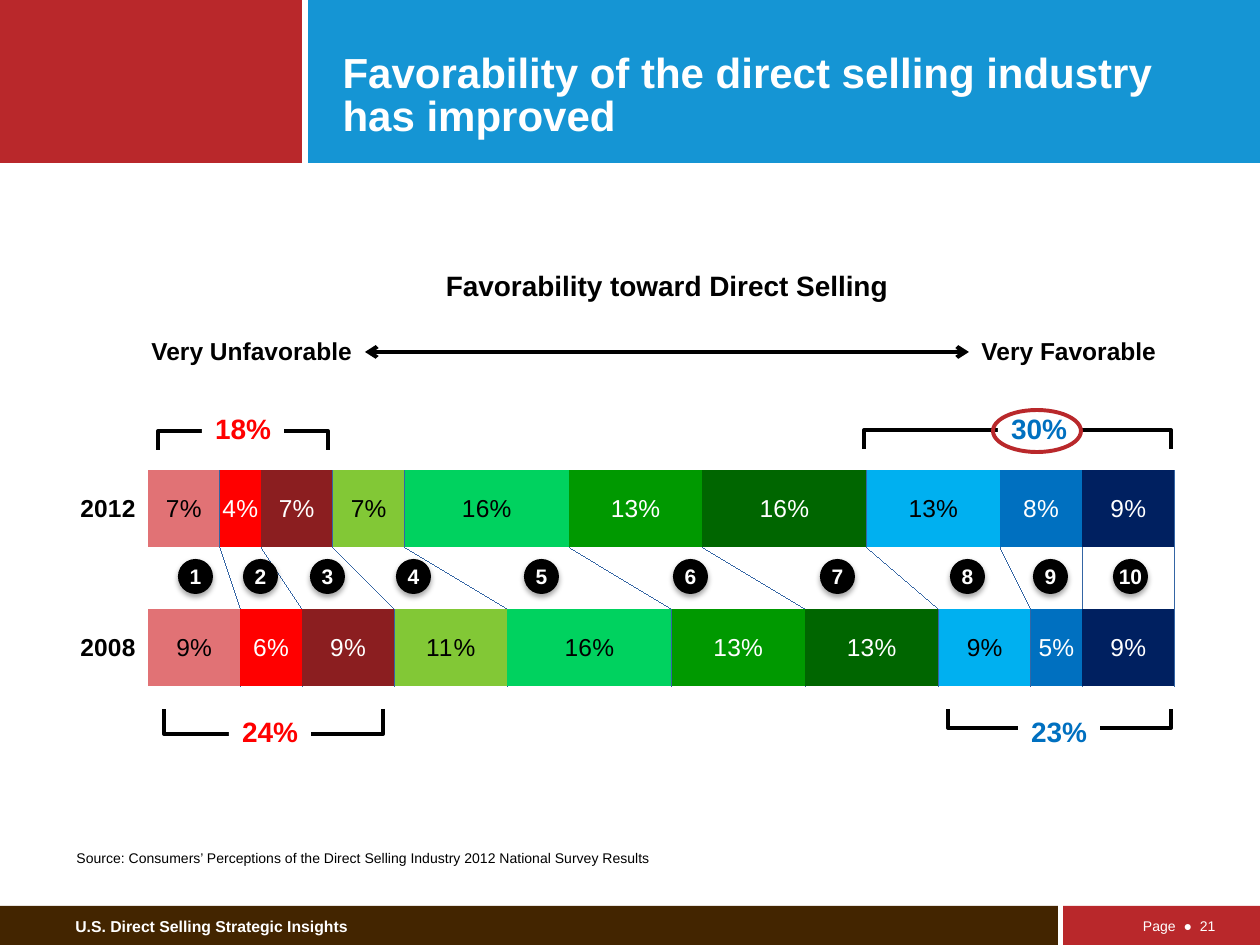
from dataclasses import dataclass

from pptx import Presentation
from pptx.chart.data import CategoryChartData
from pptx.dml.color import RGBColor
from pptx.enum.chart import XL_CHART_TYPE as ChartType, XL_TICK_MARK as Tick
from pptx.enum.shapes import MSO_CONNECTOR as Connector, MSO_SHAPE as Shape
from pptx.enum.text import MSO_ANCHOR as Anchor, MSO_AUTO_SIZE as AutoSize, PP_ALIGN as Align
from pptx.oxml import parse_xml
from pptx.oxml.ns import nsdecls, qn
from pptx.util import Pt

EMU_PER_PX = 914400 / 126


@dataclass(frozen=True)
class Theme:
    font: str = "Arial"
    blue: str = "1595D4"
    red: str = "B9282B"
    brown: str = "432500"
    white: str = "FFFFFF"
    black: str = "000000"
    unfavorable: str = "FF0000"
    favorable: str = "0070C0"
    series_line: str = "4A7EBB"
    title: int = 24
    heading: int = 16
    label: int = 14
    dot: int = 12
    footer: int = 9
    small: int = 8
    stroke: float = 2.25


THEME = Theme()

SCORES = [
    (9, 7, "E17275", THEME.black),
    (6, 4, "FF0000", THEME.white),
    (9, 7, "8B1E20", THEME.white),
    (11, 7, "82C836", THEME.black),
    (16, 16, "00D25F", THEME.black),
    (13, 13, "009900", THEME.white),
    (13, 16, "006600", THEME.white),
    (9, 13, "00B0F0", THEME.black),
    (5, 8, "0070C0", THEME.white),
    (9, 9, "002060", THEME.white),
]
DOT_LEFTS = [178, 243, 310, 396, 524, 673, 820, 950, 1033, 1113]


def px(length):
    return round(length * EMU_PER_PX)


def place(*lengths):
    return [px(length) for length in lengths]


def apply(target, values):
    for name, value in values.items():
        setattr(target, name, value)


def style_font(font, size, color, bold=False):
    apply(font, {"name": THEME.font, "size": Pt(size), "bold": bold})
    font.color.rgb = RGBColor.from_string(color)


def write(shape, text, size, color, bold=False, align=Align.LEFT, inset=None, **frame_values):
    frame = shape.text_frame
    apply(frame, {"word_wrap": True, "auto_size": AutoSize.NONE, **frame_values})
    if inset is not None:
        sides = ("left", "top", "right", "bottom")
        apply(frame, {f"margin_{side}": px(inset) for side in sides})
    para = frame.paragraphs[0]
    para.alignment = align
    span = para.add_run()
    span.text = text
    style_font(span.font, size, color, bold)
    return para


def add_text(page, box, *args, **kwargs):
    write(page.shapes.add_textbox(*place(*box)), *args, **kwargs)


def add_figure(page, kind, box, fill=None, line=None):
    shape = page.shapes.add_shape(kind, *place(*box))
    shape.shadow.inherit = False
    if fill:
        shape.fill.solid()
        shape.fill.fore_color.rgb = RGBColor.from_string(fill)
    else:
        shape.fill.background()
    if line:
        shape.line.color.rgb = RGBColor.from_string(line)
        shape.line.width = Pt(THEME.stroke)
    else:
        shape.line.fill.background()
    return shape


def add_title(page, text):
    title = page.shapes.title
    position = zip(("left", "top", "width", "height"), place(330, 24, 898, 122))
    apply(title, dict(position))
    para = write(title, text, THEME.title, THEME.white, True, vertical_anchor=Anchor.BOTTOM)
    para.line_spacing = 0.85


def add_bracket(page, left, top, width, depth, rotation):
    box = (left + (width - depth) / 2, top + (depth - width) / 2, depth, width)
    bracket = add_figure(page, Shape.RIGHT_BRACKET, box, line=THEME.black)
    bracket.adjustments[0] = 0
    bracket.rotation = rotation


def add_total(page, left, top, text, color):
    shape = add_figure(page, Shape.RECTANGLE, (left, top, 82, 47), THEME.white)
    write(shape, text, THEME.heading, color, True, Align.CENTER,
          vertical_anchor=Anchor.MIDDLE, word_wrap=False)


def add_dot(page, left, number):
    dot = add_figure(page, Shape.OVAL, (left, 559, 35, 35), THEME.black)
    dot.element.spPr.find(qn("a:effectLst")).append(parse_xml(
        f'<a:outerShdw {nsdecls("a")} blurRad="39370" dist="22860" dir="5400000" rotWithShape="0">'
        f'<a:srgbClr val="{THEME.black}"><a:alpha val="35000"/></a:srgbClr></a:outerShdw>'))
    write(dot, str(number), THEME.dot, THEME.white, True, Align.CENTER, inset=0,
          vertical_anchor=Anchor.MIDDLE, word_wrap=False)


def add_double_arrow(page, left, right, y):
    arrow = page.shapes.add_connector(Connector.STRAIGHT, *place(left, y, right, y))
    arrow.line.color.rgb = RGBColor.from_string(THEME.black)
    arrow.line.width = Pt(THEME.stroke)
    properties = arrow.element.spPr
    for end in ("headEnd", "tailEnd"):
        properties.find(qn("a:ln")).append(parse_xml(f'<a:{end} {nsdecls("a")} type="arrow"/>'))
    properties.append(parse_xml(f'<a:effectLst {nsdecls("a")}/>'))


def set_plot_layout(chart, **fractions):
    area = chart.element.find(".//" + qn("c:plotArea"))
    for layout in area.findall(qn("c:layout")):
        area.remove(layout)
    sizes = "".join(f'<c:{name} val="{value}"/>' for name, value in fractions.items())
    area.insert(0, parse_xml(
        f'<c:layout {nsdecls("c")}><c:manualLayout><c:layoutTarget val="inner"/>'
        f'<c:xMode val="edge"/><c:yMode val="edge"/>{sizes}</c:manualLayout></c:layout>'))


def add_series_lines(chart):
    overlap = chart.element.find(".//" + qn("c:overlap"))
    overlap.addnext(parse_xml(
        f'<c:serLines {nsdecls("c", "a")}><c:spPr><a:ln w="9525"><a:solidFill>'
        f'<a:srgbClr val="{THEME.series_line}"/></a:solidFill></a:ln></c:spPr></c:serLines>'))


def add_score_chart(page):
    data = CategoryChartData()
    data.categories = ["2008", "2012"]
    for number, (before, after, *_) in enumerate(SCORES, 1):
        data.add_series(f"Series {number}", (before, after))
    box = place(45, 343, 1172, 398)
    chart = page.shapes.add_chart(ChartType.BAR_STACKED, *box, data).chart
    apply(chart, {"has_legend": False, "has_title": False})
    style_font(chart.font, THEME.label, THEME.black)
    apply(chart.value_axis, {"minimum_scale": 0, "maximum_scale": 100, "major_unit": 20,
                             "has_major_gridlines": False, "visible": False})
    years = chart.category_axis
    apply(years, {"major_tick_mark": Tick.OUTSIDE, "has_major_gridlines": False})
    years.format.line.fill.background()
    style_font(years.tick_labels.font, THEME.label, THEME.black, True)
    plot = chart.plots[0]
    apply(plot, {"gap_width": 80, "overlap": 100, "vary_by_categories": False})
    for series, (_, _, fill, label_color) in zip(plot.series, SCORES):
        series.format.fill.solid()
        series.format.fill.fore_color.rgb = RGBColor.from_string(fill)
        labels = series.data_labels
        apply(labels, {"show_value": True, "number_format": '#,##0"%"',
                       "number_format_is_linked": False})
        style_font(labels.font, THEME.label, label_color)
    set_plot_layout(chart, x=0.088, y=0.243, w=0.876, h=0.697)
    add_series_lines(chart)


def main():
    deck = Presentation()
    apply(deck, {"slide_width": px(1260), "slide_height": px(945)})
    page = deck.slides.add_slide(deck.slide_layouts[5])

    for box, fill in [((0, 906, 1058, 39), THEME.brown), ((308, 0, 952, 163), THEME.blue),
                      ((0, 0, 302, 163), THEME.red), ((1063, 906, 197, 39), THEME.red)]:
        add_figure(page, Shape.RECTANGLE, box, fill)
    shapes = page.shapes.title.element.getparent()
    shapes.append(page.shapes.title.element)
    add_title(page, "Favorability of the direct selling industry has improved")
    add_text(page, (63, 911, 416, 31), "U.S. Direct Selling Strategic Insights",
             THEME.footer, THEME.white, True, vertical_anchor=Anchor.MIDDLE)
    add_text(page, (1058, 911, 170, 30), "Page\u00a0 ●\u00a0 21".replace("\u00a0", " "),
             THEME.small, THEME.white, align=Align.RIGHT, vertical_anchor=Anchor.MIDDLE)

    add_score_chart(page)
    add_double_arrow(page, 365, 969, 352)
    add_text(page, (352, 268, 630, 42), "Favorability toward Direct Selling",
             THEME.heading, THEME.black, True, Align.CENTER, inset=0)
    for left, width, text in [(139, 227, "Very Unfavorable"), (969, 202, "Very Favorable")]:
        add_text(page, (left, 330, width, 43), text, THEME.label, THEME.black, True,
                 word_wrap=False, auto_size=AutoSize.SHAPE_TO_FIT_TEXT)

    for bracket in [(158, 431, 170, 19, 270), (864, 430, 307, 19, 270),
                    (164, 709, 219, 25, 90), (948, 709, 223, 19, 90)]:
        add_bracket(page, *bracket)
    for total in [(998, 405, "30%", THEME.favorable), (202, 405, "18%", THEME.unfavorable),
                  (1018, 708, "23%", THEME.favorable), (229, 708, "24%", THEME.unfavorable)]:
        add_total(page, *total)
    for number, left in enumerate(DOT_LEFTS, 1):
        add_dot(page, left, number)
    add_figure(page, Shape.OVAL, (993, 410, 88, 42), line=THEME.red)
    add_text(page, (64, 843, 1027, 30),
             "Source: Consumers’ Perceptions of the Direct Selling Industry 2012 National Survey Results",
             THEME.small, THEME.black)
    deck.save("out.pptx")


if __name__ == "__main__":
    main()
